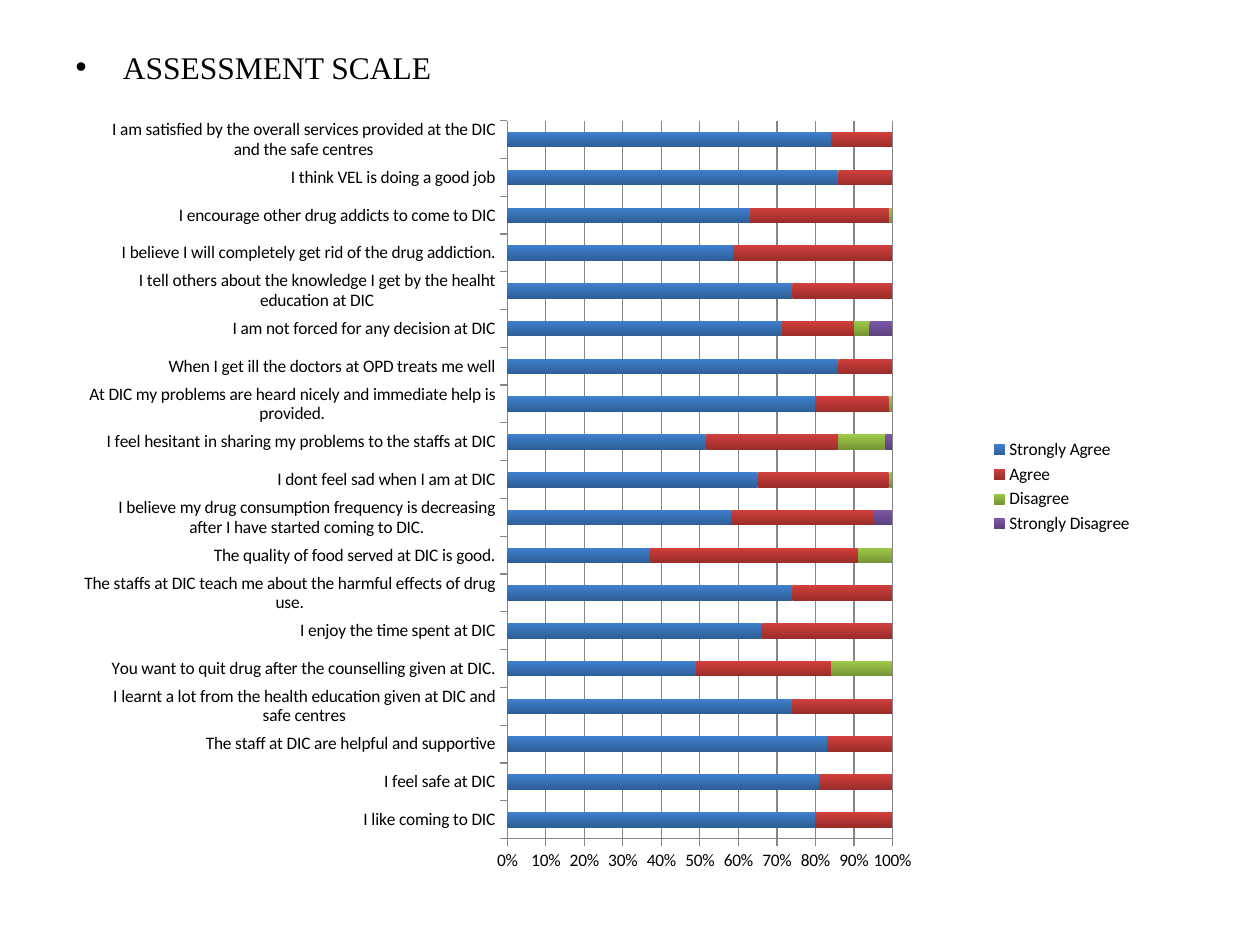
from lxml import etree
from pptx import Presentation
from pptx.chart.data import CategoryChartData
from pptx.dml.color import RGBColor
from pptx.enum.chart import XL_CHART_TYPE, XL_LEGEND_POSITION, XL_TICK_MARK
from pptx.oxml.ns import qn
from pptx.util import Cm, Pt

STACKED_BAR = XL_CHART_TYPE.BAR_STACKED_100
LEGEND_RIGHT = XL_LEGEND_POSITION.RIGHT
TICK_OUTSIDE = XL_TICK_MARK.OUTSIDE

HEADING = "ASSESSMENT SCALE"
SERIES = [
    ("Strongly Agree", "3F80CD", "2E5F99"),
    ("Agree", "D1403C", "9B2D2A"),
    ("Disagree", "9FCA49", "769535"),
    ("Strongly Disagree", "7E57A9", "5D417E"),
]
RESPONSES = [
    ("I like coming to DIC", 80, 20, 0, 0),
    ("I feel safe at DIC", 81, 19, 0, 0),
    ("The staff at DIC are helpful and supportive", 83, 17, 0, 0),
    ("I learnt a lot from the health education given at DIC and safe centres", 74, 26, 0, 0),
    ("You want to quit drug after the counselling given at DIC.", 49, 35, 16, 0),
    ("I enjoy the time spent at DIC", 66, 34, 0, 0),
    ("The staffs at DIC teach me about the harmful effects of drug use.", 74, 26, 0, 0),
    ("The quality of food served at DIC is good.", 37, 54, 9, 0),
    ("I believe my drug consumption frequency is decreasing after I have started coming to DIC.",
     58, 37, 0, 5),
    ("I dont feel sad when I am at DIC", 65, 34, 1, 0),
    ("I feel hesitant in sharing my problems to the staffs at DIC", 51, 34, 12, 2),
    ("At DIC my problems are heard nicely and immediate help is provided.", 80, 19, 1, 0),
    ("When I get ill the doctors at OPD treats me well", 86, 14, 0, 0),
    ("I am not forced for any decision at DIC", 72, 19, 4, 6),
    ("I tell others about the knowledge I get by the healht education at DIC", 74, 26, 0, 0),
    ("I believe I will completely get rid of the drug addiction.", 58, 41, 0, 0),
    ("I encourage other drug addicts to come to DIC", 63, 36, 1, 0),
    ("I think VEL is doing a good job", 86, 14, 0, 0),
    ("I am satisfied by the overall services provided at the DIC and the safe centres",
     84, 16, 0, 0),
]
PLOT_LAYOUT = [
    ("layoutTarget", "inner"), ("xMode", "edge"), ("yMode", "edge"),
    ("x", "0.392"), ("y", "0.021"), ("w", "0.367"), ("h", "0.94"),
]


def color(hex_code):
    """Turn a hex string into a colour."""
    return RGBColor.from_string(hex_code)


def add_heading(slide):
    """Fill the body placeholder with the bulleted heading."""
    title, body = slide.placeholders
    title.element.getparent().remove(title.element)
    body.left, body.top, body.width, body.height = Cm(1.27), Cm(0.84), Cm(22.86), Cm(16.18)
    paragraph = body.text_frame.paragraphs[0]
    paragraph.text = HEADING
    paragraph.font.size = Pt(18)
    paragraph.font.name = "Times New Roman"
    paragraph.font.color.rgb = color("000000")


def place_plot(chart):
    """Fix the inner plot area as fractions of the chart."""
    plot_area = chart.element.find(".//" + qn("c:plotArea"))
    layout = plot_area.find(qn("c:layout"))
    if layout is None:
        layout = etree.Element(qn("c:layout"))
        plot_area.insert(0, layout)
    manual = etree.SubElement(layout, qn("c:manualLayout"))
    for name, value in PLOT_LAYOUT:
        etree.SubElement(manual, qn("c:" + name)).set("val", value)


def format_axes(chart):
    """Give both axes grey lines and outside ticks."""
    value_axis, category_axis = chart.value_axis, chart.category_axis
    value_axis.has_major_gridlines = True
    value_axis.tick_labels.number_format = "0%"
    value_axis.tick_labels.number_format_is_linked = False
    value_axis.major_unit = 0.1
    value_axis.maximum_scale = 1
    for axis in (value_axis, category_axis):
        axis.major_tick_mark = TICK_OUTSIDE
    for part in (value_axis, category_axis, value_axis.major_gridlines):
        part.format.line.color.rgb = color("868686")
        part.format.line.width = Pt(0.75)


def add_responses(slide):
    """Add the stacked bar chart of responses."""
    data = CategoryChartData()
    statements, *columns = zip(*RESPONSES)
    data.categories = statements
    for (name, _, _), values in zip(SERIES, columns):
        data.add_series(name, values)
    chart = slide.shapes.add_chart(
        STACKED_BAR, Cm(1.7), Cm(2.11), Cm(21.39), Cm(15.44), data).chart
    chart.has_title = False
    chart.font.name = "Calibri"
    chart.font.size = Pt(10)
    chart.font.color.rgb = color("000000")
    chart.has_legend = True
    chart.legend.position = LEGEND_RIGHT
    chart.legend.include_in_layout = False
    plot = chart.plots[0]
    plot.gap_width, plot.overlap, plot.vary_by_categories = 150, 100, False
    for series, (_, light, dark) in zip(plot.series, SERIES):
        fill = series.format.fill
        fill.gradient()
        fill.gradient_angle = 270
        for stop, shade in zip(fill.gradient_stops, (light, dark)):
            stop.color.rgb = color(shade)
    format_axes(chart)
    place_plot(chart)


def main():
    """Build and save the slide."""
    presentation = Presentation()
    presentation.slide_width, presentation.slide_height = Cm(25.4), Cm(19.05)
    slide = presentation.slides.add_slide(presentation.slide_layouts[1])
    add_heading(slide)
    add_responses(slide)
    presentation.save("out.pptx")


if __name__ == "__main__":
    main()
